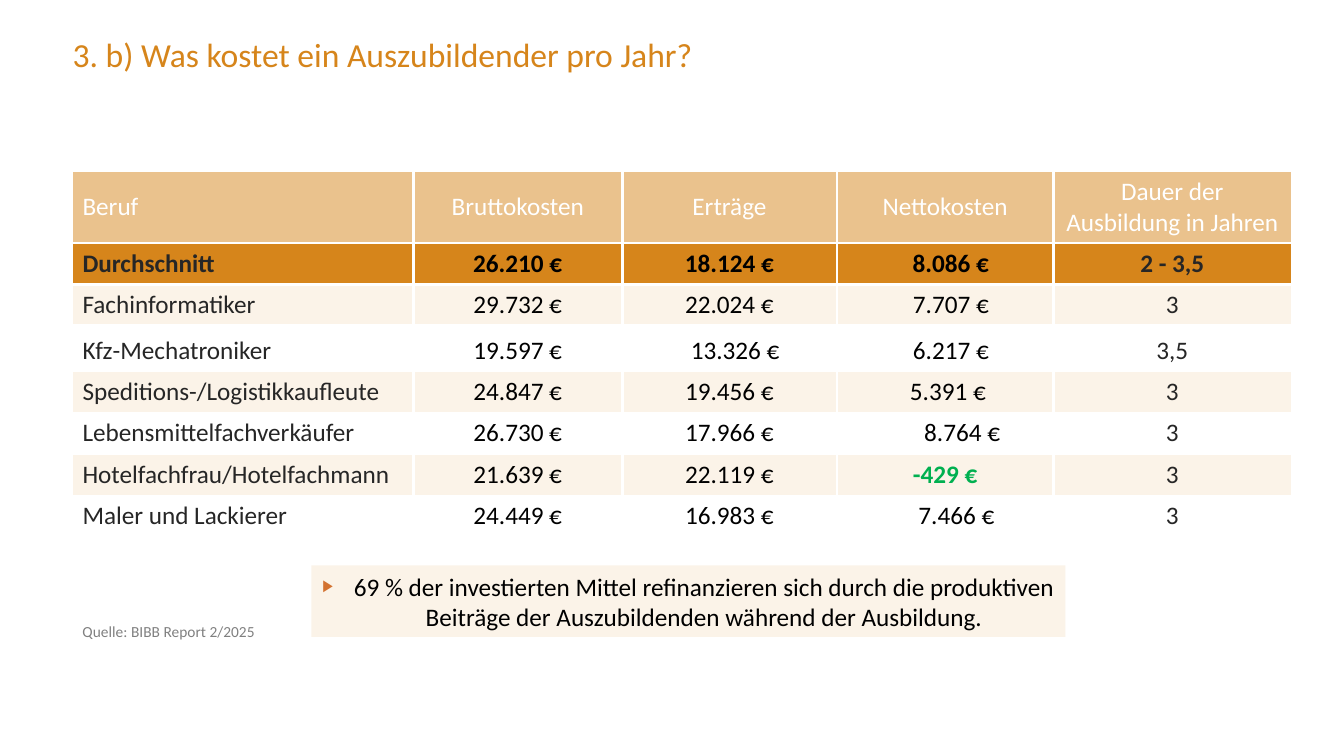
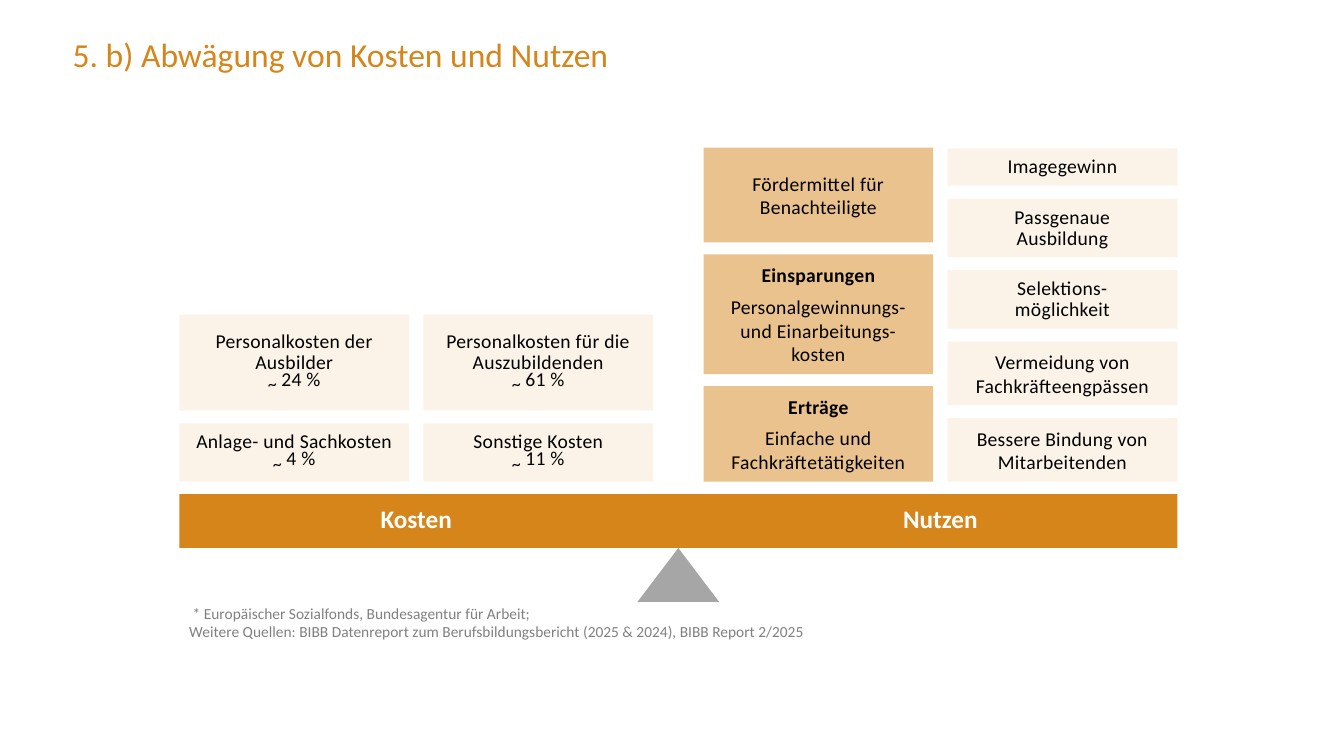
from lxml import etree
from pptx import Presentation
from pptx.dml.color import RGBColor
from pptx.enum import shapes, text
from pptx.oxml import ns
from pptx.util import Cm, Pt

ORANGE, SAND, CREAM, WHITE = "D6851B", "EAC28D", "FBF3E8", "FFFFFF"
BLACK, DARK, GREY, MID_GREY = "000000", "262626", "808080", "A6A6A6"
GREEN, RUST = "00B050", "D37230"
FONT = "Calibri"
LEFT = 1.83
CENTER = text.PP_ALIGN.CENTER
TOP, MIDDLE = text.MSO_ANCHOR.TOP, text.MSO_ANCHOR.MIDDLE


def rgb(value):
    """Turn a hex string into a colour."""
    return RGBColor.from_string(value)


def child(parent, tag, **attrs):
    """Append a drawing element with attributes."""
    return etree.SubElement(parent, ns.qn(f"a:{tag}"), attrs)


def write(p, content, size=18, color=BLACK, bold=False, align=None, spacing=None,
          before=None, track=None, baseline=None):
    """Add text to a paragraph, with line breaks at newlines."""
    if align is not None:
        p.alignment = align
    if spacing is not None:
        p.line_spacing = spacing
    if before is not None:
        p.space_before = Pt(before)
    for i, line in enumerate(content.split("\n")):
        if i:
            p.add_line_break()
        r = p.add_run()
        r.text = line
        r.font.name, r.font.size, r.font.bold = FONT, Pt(size), bold
        r.font.color.rgb = rgb(color)
        if track:
            r.font._element.set("spc", str(track))
        if baseline:
            r.font._element.set("baseline", str(baseline))


def frame(sp, anchor=TOP, inset=None):
    """Prepare the text frame of a shape and return it."""
    tf = sp.text_frame
    tf.word_wrap = True
    tf.auto_size = text.MSO_AUTO_SIZE.NONE
    tf.vertical_anchor = anchor
    if inset is not None:
        tf.margin_left = tf.margin_right = Cm(inset[0])
        tf.margin_top = tf.margin_bottom = Cm(inset[1])
    return tf


def add_block(s, box, fill, kind=shapes.MSO_SHAPE.RECTANGLE):
    """Add a plain filled shape without outline."""
    sp = s.shapes.add_shape(kind, *map(Cm, box))
    sp.shadow.inherit = False
    sp.fill.solid()
    sp.fill.fore_color.rgb = rgb(fill)
    sp.line.fill.background()
    return sp


def add_text(s, box, lines, anchor=TOP, inset=None, **style):
    """Add a text box with one paragraph per line."""
    tf = frame(s.shapes.add_textbox(*map(Cm, box)), anchor, inset)
    for i, line in enumerate(lines):
        write(tf.add_paragraph() if i else tf.paragraphs[0], line, **style)


def add_slide(prs, title):
    """Add a title-only slide with the shared title style."""
    s = prs.slides.add_slide(prs.slide_layouts[5])
    sp = s.shapes.title
    sp.left, sp.top, sp.width, sp.height = map(Cm, (LEFT, 0.81, 25, 1.24))
    tf = frame(sp, MIDDLE, (0, 0))
    write(tf.paragraphs[0], title, size=24, color=ORANGE,
          align=text.PP_ALIGN.LEFT, spacing=0.9)
    return s


def add_borders(cell, sides):
    """Draw white borders on the given sides of a cell."""
    pr = cell._tc.get_or_add_tcPr()
    for i, side in enumerate(sides):
        ln = etree.Element(ns.qn(f"a:ln{side}"), w=str(Pt(2.25)))
        child(child(ln, "solidFill"), "srgbClr", val=WHITE)
        pr.insert(i, ln)


COST_ROWS = [
    ("Beruf", "Bruttokosten", "Erträge", "Nettokosten", "Dauer der Ausbildung in Jahren"),
    ("Durchschnitt", "26.210 €", "18.124 €", "8.086 €", "2 - 3,5"),
    ("Fachinformatiker", "29.732 €", "22.024 €", "7.707 €", "3"),
    ("Kfz-Mechatroniker", "19.597 €", "13.326 €", "6.217 €", "3,5"),
    ("Speditions-/Logistikkaufleute", "24.847 €", "19.456 €", "5.391 €", "3"),
    ("Lebensmittelfachverkäufer", "26.730 €", "17.966 €", "8.764 €", "3"),
    ("Hotelfachfrau/Hotelfachmann", "21.639 €", "22.119 €", "-429 €", "3"),
    ("Maler und Lackierer", "24.449 €", "16.983 €", "7.466 €", "3"),
]
COST_WIDTHS = (8.59, 5.26, 5.41, 5.46, 5.99)
COST_HEIGHTS = (1.78, 1.04, 1.04, 1.16, 1.04, 1.04, 1.04, 1.04)
EXTRA_INDENT = {(1, 3): 0.29, (2, 3): 0.29, (3, 2): 0.29, (3, 3): 0.29,
                (4, 3): 0.14, (5, 3): 0.86, (7, 3): 0.57}
AVERAGE_ROW, LOOSE_ROW = 1, 3


def cell_color(row, col, value):
    """Choose the text colour of a cost cell."""
    if row == 0:
        return WHITE
    if value.startswith("-"):
        return GREEN
    return BLACK if 0 < col < 4 else DARK


def add_cost_table(s, left, top):
    """Place the table of training costs."""
    table = s.shapes.add_table(
        len(COST_ROWS), len(COST_WIDTHS), Cm(left), Cm(top),
        Cm(sum(COST_WIDTHS)), Cm(sum(COST_HEIGHTS))).table
    table.horz_banding = False
    for col, width in enumerate(COST_WIDTHS):
        table.columns[col].width = Cm(width)
    for row, values in enumerate(COST_ROWS):
        table.rows[row].height = Cm(COST_HEIGHTS[row])
        fill = (SAND, ORANGE)[row] if row < 2 else (CREAM, WHITE)[row % 2]
        for col, value in enumerate(values):
            cell = table.cell(row, col)
            cell.fill.solid()
            cell.fill.fore_color.rgb = rgb(fill)
            cell.vertical_anchor = TOP if row else MIDDLE
            cell.margin_left = Cm(0.25 + EXTRA_INDENT.get((row, col), 0))
            write(cell.text_frame.paragraphs[0], value,
                  color=cell_color(row, col, value),
                  bold=row == AVERAGE_ROW or value.startswith("-"),
                  align=CENTER if col else None,
                  spacing=1.15 if row == LOOSE_ROW else None)
            wanted = {"L": col > 0, "R": col < len(values) - 1,
                      "T": row in (1, 2), "B": row in (0, 1)}
            add_borders(cell, [side for side, on in wanted.items() if on])


def add_key_message(s, box, message):
    """Place the highlighted message with its arrow bullet."""
    p = frame(add_block(s, box, CREAM)).paragraphs[0]
    pr = p._p.get_or_add_pPr()
    pr.set("marL", str(Cm(0.79)))
    pr.set("indent", str(-Cm(0.79)))
    child(child(pr, "buClr"), "srgbClr", val=RUST)
    child(pr, "buSzPct", val="65000")
    child(pr, "buFont", typeface="Arial")
    child(pr, "buChar", char="▶")
    write(p, message, align=CENTER, spacing=Pt(22))


def cost_slide(prs):
    """Build the slide on yearly costs per trainee."""
    s = add_slide(prs, "3. b) Was kostet ein Auszubildender pro Jahr?")
    add_cost_table(s, LEFT, 4.32)
    add_key_message(s, (7.85, 14.25, 19, 1.8),
                    "69 % der investierten Mittel refinanzieren sich durch die "
                    "produktiven Beiträge der Auszubildenden während der Ausbildung.")
    add_text(s, (LEFT, 15.55, 6, 0.74), ["Quelle: BIBB Report 2/2025"],
             size=11, color=GREY)


CARD_W, CARD_GAP = 5.79, 0.36


def add_card(s, box, fill, heading=None, body="", share=None, tight=False):
    """Place one weight: an optional heading, a body and an optional share."""
    tf = frame(add_block(s, box, fill), MIDDLE, (0.1, 0.2))
    style = dict(size=14, track=20, align=CENTER, spacing=Pt(15) if tight else None)
    p = tf.paragraphs[0]
    if heading:
        write(p, heading, bold=True, **style)
        p = tf.add_paragraph()
    write(p, body, before=6 if heading else None, **style)
    if share:
        p = tf.add_paragraph()
        write(p, "~ ", baseline=-14000, **{**style, "size": 22})
        write(p, share, **style)


def add_stack(s, left, bottom, gap, fill, cards):
    """Pile cards upwards from a bottom edge."""
    for height, content in cards:
        add_card(s, (left, bottom - height, CARD_W, height), fill, **content)
        bottom -= height + gap


COST_STACKS = [
    [(1.47, dict(body="Anlage- und Sachkosten", share="4 %", tight=True)),
     (2.41, dict(body="Personalkosten der Ausbilder", share="24 %", tight=True))],
    [(1.47, dict(body="Sonstige Kosten", share="11 %", tight=True)),
     (2.41, dict(body="Personalkosten für die Auszubildenden", share="61 %", tight=True))],
]
MONEY_STACK = [
    (2.41, dict(heading="Erträge", body="Einfache und Fachkräftetätigkeiten")),
    (3.02, dict(heading="Einsparungen",
                body="Personalgewinnungs-\nund Einarbeitungs-\nkosten")),
    (2.39, dict(body="Fördermittel für Benachteiligte")),
]
SOFT_STACK = [
    (1.6, dict(body="Bessere Bindung von Mitarbeitenden")),
    (1.6, dict(body="Vermeidung von Fachkräfteengpässen")),
    (1.47, dict(body="Selektions-\nmöglichkeit", tight=True)),
    (1.47, dict(body="Passgenaue\nAusbildung", tight=True)),
    (0.94, dict(body="Imagegewinn", tight=True)),
]


def add_scale(s, left, top, width, height):
    """Place the beam, its pivot, its labels and the weights on it."""
    pivot_w, pan_w = 2.06, 2 * CARD_W + CARD_GAP
    right_pan = left + width - pan_w
    add_block(s, (left + (width - pivot_w) / 2, top + height, pivot_w, height),
              MID_GREY, shapes.MSO_SHAPE.ISOSCELES_TRIANGLE)
    add_block(s, (left, top, width, height), ORANGE)
    for x, label in ((left, "Kosten"), (right_pan, "Nutzen")):
        add_text(s, (x, top + 0.07, pan_w, 1.19), [label], MIDDLE, (0, 0),
                 color=WHITE, bold=True, align=CENTER, spacing=0.9)
    step, bottom = CARD_W + CARD_GAP, top - 0.31
    for i, cards in enumerate(COST_STACKS):
        add_stack(s, left + i * step, bottom, 0.33, CREAM, cards)
    add_stack(s, right_pan, bottom, 0.3, SAND, MONEY_STACK)
    add_stack(s, right_pan + step, bottom, 0.33, CREAM, SOFT_STACK)


def balance_slide(prs):
    """Build the slide weighing costs against benefits."""
    s = add_slide(prs, "5. b) Abwägung von Kosten und Nutzen")
    add_scale(s, 4.52, 12.45, 25.15, 1.36)
    add_text(s, (4.52, 15.09, 27.58, 1.96),
             [" * Europäischer Sozialfonds, Bundesagentur für Arbeit;",
              "Weitere Quellen: BIBB Datenreport zum Berufsbildungsbericht "
              "(2025 & 2024), BIBB Report 2/2025"], size=11, color=GREY)


def main():
    """Build and save the presentation."""
    prs = Presentation()
    prs.slide_width, prs.slide_height = Cm(33.87), Cm(19.05)
    cost_slide(prs)
    balance_slide(prs)
    prs.save("out.pptx")


if __name__ == "__main__":
    main()
